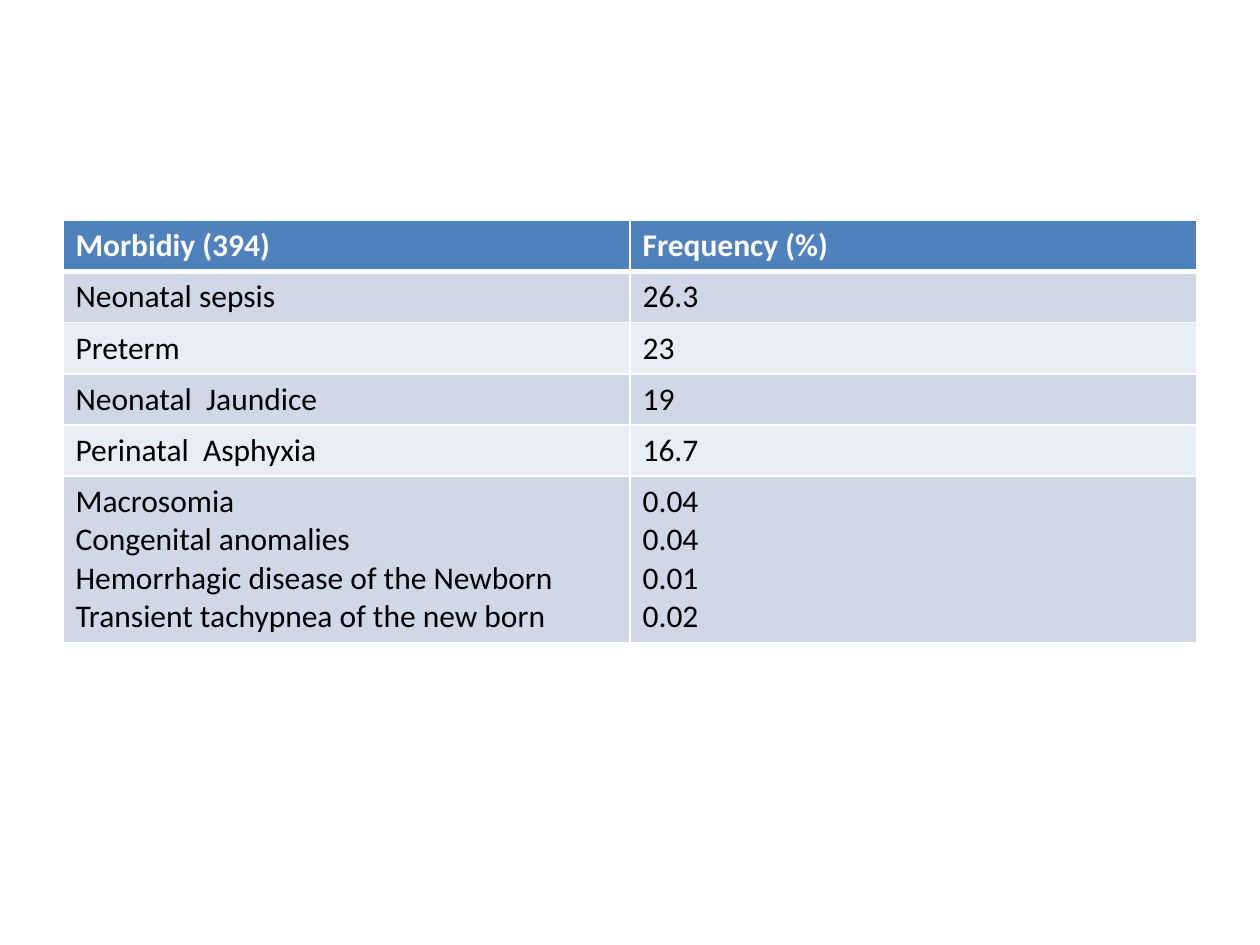
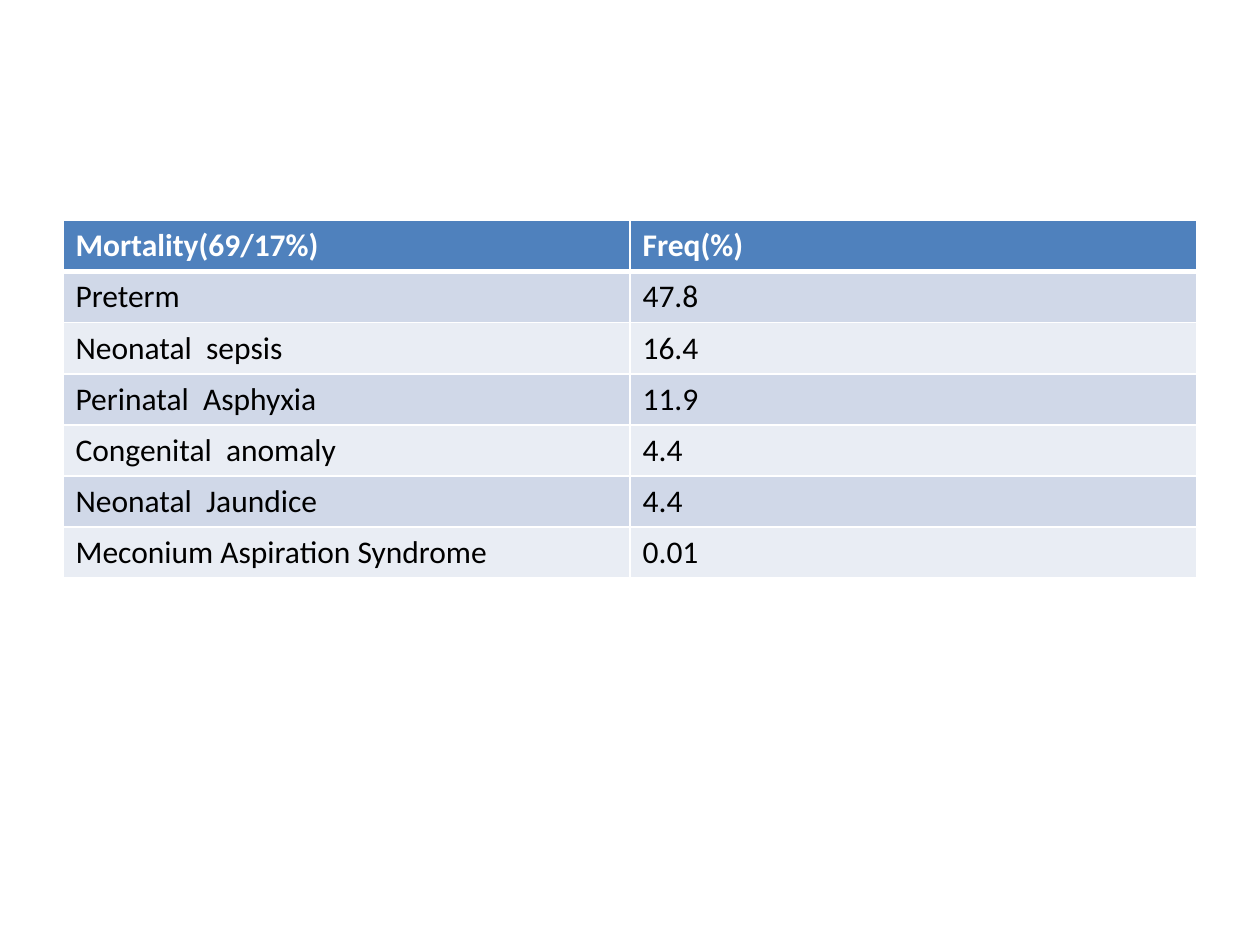
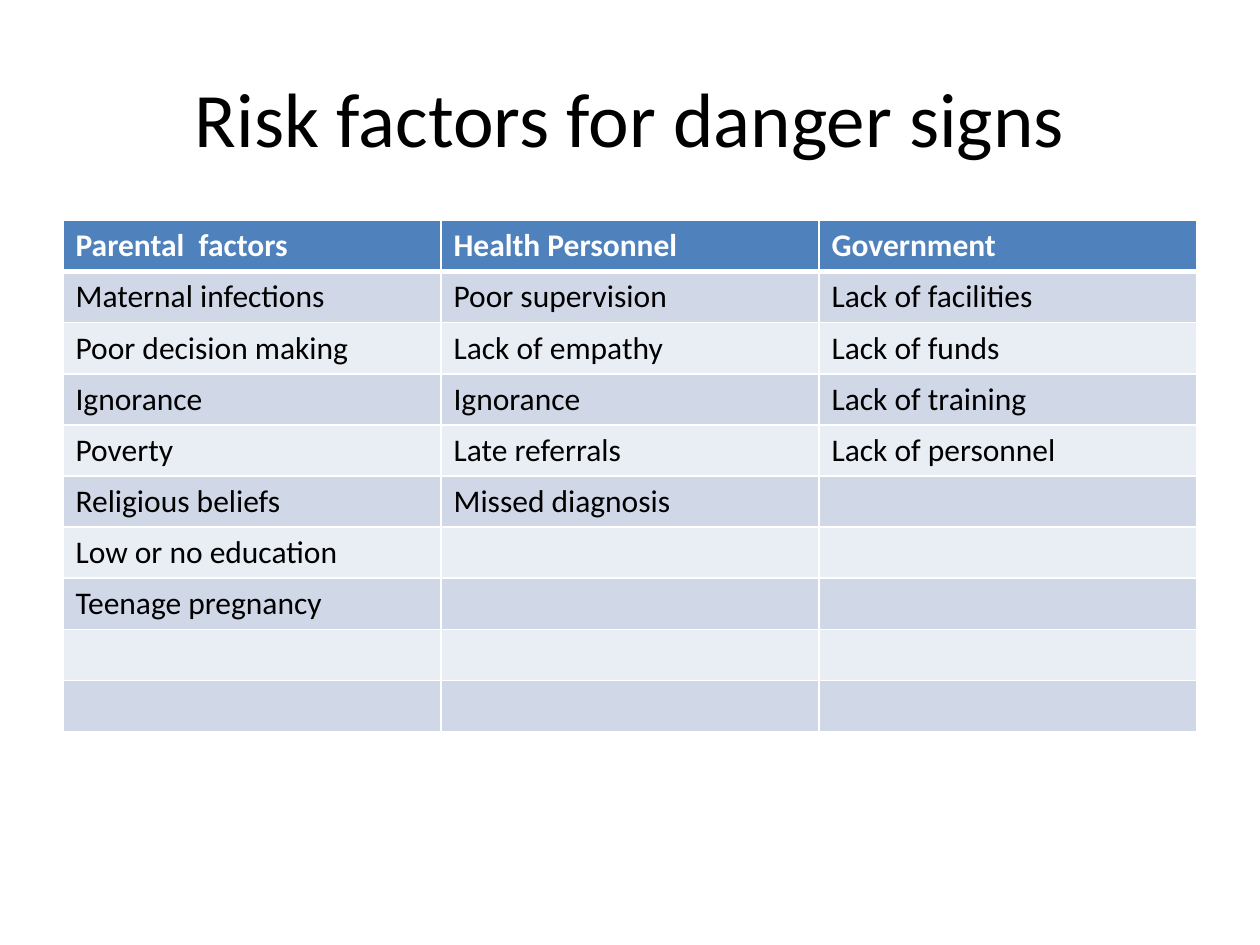
"""Build three slides of neonatal morbidity, mortality and risk factor tables."""
from itertools import zip_longest

from lxml.etree import SubElement
from pptx import Presentation
from pptx.dml.color import RGBColor
from pptx.enum.text import MSO_ANCHOR as Anchor, PP_ALIGN as Align
from pptx.oxml.ns import qn
from pptx.util import Inches, Pt

SLIDES = [
    {"columns": {
        "Morbidiy (394)": [
            "Neonatal sepsis", "Preterm", "Neonatal  Jaundice", "Perinatal  Asphyxia",
            "Macrosomia\nCongenital anomalies\nHemorrhagic disease of the Newborn\n"
            "Transient tachypnea of the new born"],
        "Frequency (%)": ["26.3", "23", "19", "16.7", "0.04\n0.04\n0.01\n0.02"],
    }},
    {"columns": {
        "Mortality(69/17%)": [
            "Preterm", "Neonatal  sepsis", "Perinatal  Asphyxia", "Congenital  anomaly",
            "Neonatal  Jaundice", "Meconium Aspiration Syndrome"],
        "Freq(%)": ["47.8", "16.4", "11.9", "4.4", "4.4", "0.01"],
    }},
    {"title": "Risk factors for danger signs",
     "spare_rows": 2,
     "columns": {
         "Parental  factors": [
             "Maternal infections", "Poor decision making", "Ignorance", "Poverty",
             "Religious beliefs", "Low or no education", "Teenage pregnancy"],
         "Health Personnel": [
             "Poor supervision", "Lack of empathy", "Ignorance", "Late referrals",
             "Missed diagnosis"],
         "Government": [
             "Lack of facilities", "Lack of funds", "Lack of training", "Lack of personnel"],
     }},
]

FONT = "Calibri"
WHITE = RGBColor(0xFF, 0xFF, 0xFF)
BLACK = RGBColor(0x00, 0x00, 0x00)
HEADER_BLUE = RGBColor(0x4F, 0x81, 0xBD)
BANDS = (RGBColor(0xE9, 0xED, 0xF4), RGBColor(0xD0, 0xD8, 0xE8))

SLIDE_WIDTH, SLIDE_HEIGHT = Inches(10), Inches(7.5)
MARGIN = int(SLIDE_WIDTH * 0.05)
CONTENT_WIDTH = SLIDE_WIDTH - 2 * MARGIN
TITLE_TOP, TITLE_HEIGHT = int(SLIDE_HEIGHT * 0.04), Inches(1.25)
TABLE_TOP = Inches(1.75)
LINE_HEIGHT, CELL_PADDING = Pt(22), Inches(0.1)
THIN, THICK = Pt(1), Pt(3)


def add_run(paragraph, text, size, color, bold=False):
    run = paragraph.add_run()
    run.text = text
    font = run.font
    font.name, font.size, font.bold = FONT, Pt(size), bold
    font.color.rgb = color


def add_title(slide, title):
    frame = slide.shapes.add_textbox(MARGIN, TITLE_TOP, CONTENT_WIDTH, TITLE_HEIGHT).text_frame
    frame.word_wrap = True
    frame.vertical_anchor = Anchor.MIDDLE
    heading = frame.paragraphs[0]
    heading.alignment = Align.CENTER
    add_run(heading, title, 44, BLACK)


def set_borders(cell, top, bottom):
    properties = cell._tc.get_or_add_tcPr()
    for side, width in (("L", THIN), ("R", THIN), ("T", top), ("B", bottom)):
        line = SubElement(properties, qn(f"a:ln{side}"), w=str(width))
        SubElement(SubElement(line, qn("a:solidFill")), qn("a:srgbClr"), val=str(WHITE))


def fill_cell(cell, text, row):
    is_header = row == 0
    set_borders(cell, THICK if row == 1 else THIN, THICK if is_header else THIN)
    cell.fill.solid()
    cell.fill.fore_color.rgb = HEADER_BLUE if is_header else BANDS[row % 2]
    frame = cell.text_frame
    for index, line in enumerate(text.split("\n") if text else []):
        paragraph = frame.paragraphs[0] if index == 0 else frame.add_paragraph()
        add_run(paragraph, line, 18, WHITE if is_header else BLACK, is_header)


def add_factor_table(slide, columns, spare_rows):
    rows = [tuple(columns), *zip_longest(*columns.values(), fillvalue="")]
    rows += [("",) * len(columns)] * spare_rows
    heights = [CELL_PADDING + LINE_HEIGHT * max(text.count("\n") + 1 for text in row)
               for row in rows]
    table = slide.shapes.add_table(len(rows), len(columns), MARGIN, TABLE_TOP,
                                   CONTENT_WIDTH, sum(heights)).table
    for row, (texts, height) in enumerate(zip(rows, heights)):
        table.rows[row].height = height
        for column, text in enumerate(texts):
            fill_cell(table.cell(row, column), text, row)


def main():
    deck = Presentation()
    deck.slide_width, deck.slide_height = SLIDE_WIDTH, SLIDE_HEIGHT
    for content in SLIDES:
        slide = deck.slides.add_slide(deck.slide_layouts[6])
        if "title" in content:
            add_title(slide, content["title"])
        add_factor_table(slide, content["columns"], content.get("spare_rows", 0))
    deck.save("out.pptx")


if __name__ == "__main__":
    main()
